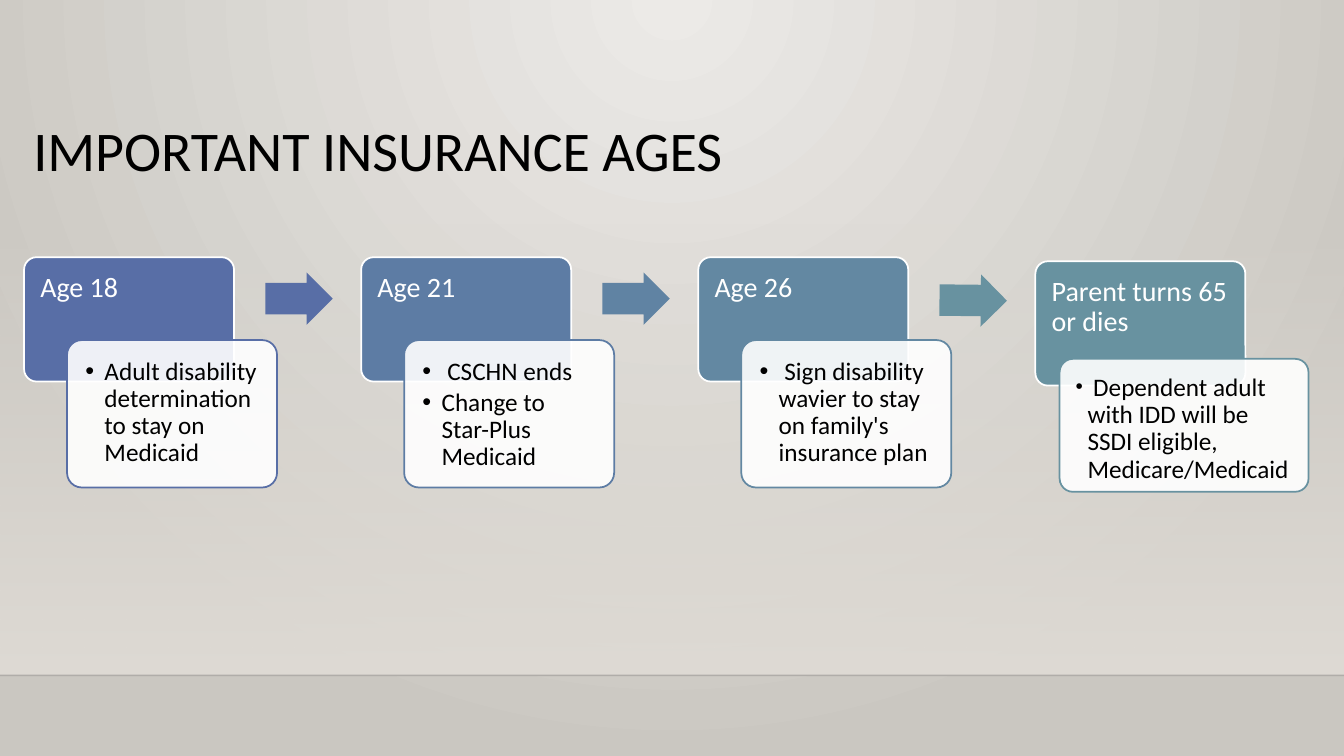
import lxml.etree
import pptx
import pptx.dml.color
import pptx.enum.shapes
import pptx.enum.text
import pptx.oxml
import pptx.oxml.ns
import pptx.util

Pt = pptx.util.Pt
SHAPE = pptx.enum.shapes.MSO_SHAPE
FONT = "Calibri"
COLORS = {
    "glow": "ECEAE7", "edge": "CAC7C1", "floor": "DFDBD5", "rule": "000001",
    "text": "000000", "white": "FFFFFF",
    "age18": "586EA6", "age21": "5D7CA4", "age26": "6388A2", "parent": "6892A0",
    "arrow21": "6083A3",
}
STAGES = [
    {"head": "Age 18", "color": "age18", "arrow": "age18",
     "items": ["Adult disability determination to stay on Medicaid"]},
    {"head": "Age 21", "color": "age21", "arrow": "arrow21",
     "items": [" CSCHN ends", "Change to Star-Plus Medicaid"]},
    {"head": "Age 26", "color": "age26", "arrow": "parent", "arrow_top": 12.2, "turn": 0.6,
     "items": [" Sign disability wavier to stay on family's insurance plan"]},
    {"head": "Parent turns 65 or dies", "color": "parent", "drop": 2.9,
     "card": (17.3, 69.7, 177.8, 95), "inset": 8.6, "indent": 8.6, "bullet": 83,
     "items": [" Dependent adult with IDD will be SSDI eligible, Medicare/Medicaid"]},
]


def rgb(name):
    """Return the named colour."""
    return pptx.dml.color.RGBColor.from_string(COLORS[name])


def add_sub(parent, tag, **attrs):
    """Append a DrawingML element to its parent."""
    return lxml.etree.SubElement(parent, pptx.oxml.ns.qn(tag), **attrs)


def set_alpha(fill, percent):
    """Set the opacity of a solid fill element holder."""
    color = next(fill.iter(pptx.oxml.ns.qn("a:srgbClr")))
    add_sub(color, "a:alpha", val=str(percent * 1000))


def set_gradient(fill, first, last):
    """Apply a two-stop gradient and return its XML element's stops."""
    fill.gradient()
    for stop, name, position in zip(fill.gradient_stops, (first, last), (0, 1)):
        stop.color.rgb = rgb(name)
        stop.position = position


def add_box(s, kind, box, adjustments=()):
    """Add a preset shape without shadow in the given box."""
    sp = s.shapes.add_shape(kind, *(Pt(v) for v in box))
    sp.shadow.inherit = False
    for i, value in enumerate(adjustments):
        sp.adjustments[i] = value
    return sp


def fill_box(sp, fill, line=None):
    """Give a shape a solid fill and an optional outline."""
    sp.fill.solid()
    sp.fill.fore_color.rgb = rgb(fill)
    if line:
        sp.line.color.rgb = rgb(line)
        sp.line.width = Pt(1.25)
    else:
        sp.line.fill.background()


def format_paragraph(p, size, color, after=0):
    """Format a paragraph and its runs."""
    p.alignment = pptx.enum.text.PP_ALIGN.LEFT
    p.line_spacing = 0.9
    p.space_after = Pt(after)
    for r in p.runs:
        r.font.name = FONT
        r.font.size = Pt(size)
        r.font.color.rgb = rgb(color)


def set_frame(tf, inset, anchor):
    """Set wrapping, equal margins and the anchor of a text frame."""
    tf.word_wrap = True
    tf.vertical_anchor = anchor
    tf.margin_left = tf.margin_right = tf.margin_top = tf.margin_bottom = Pt(inset)


def add_backdrop(s, width, floor_top, floor_bottom):
    """Draw the radial background, the fading wall and the floor line."""
    set_gradient(s.background.fill, "glow", "edge")
    grad = next(s.element.iter(pptx.oxml.ns.qn("a:gradFill")))
    grad.remove(grad.find(pptx.oxml.ns.qn("a:lin")))
    radial = add_sub(grad, "a:path", path="circle")
    add_sub(radial, "a:fillToRect", l="43000", t="0", r="43000", b="100000")

    wall = add_box(s, SHAPE.RECTANGLE, (0, floor_top, width, floor_bottom - floor_top))
    set_gradient(wall.fill, "floor", "floor")
    wall.fill.gradient_angle = 270
    set_alpha(wall.element.spPr, 0)
    wall.line.fill.background()

    rule = s.shapes.add_connector(pptx.enum.shapes.MSO_CONNECTOR.STRAIGHT,
                                  0, Pt(floor_bottom), Pt(width), Pt(floor_bottom))
    rule.line.color.rgb = rgb("rule")
    rule.line.width = Pt(1)
    set_alpha(rule.element.spPr, 20)
    add_sub(rule.element.spPr, "a:effectLst")


def add_title(s, text, box):
    """Place the slide title in its placeholder."""
    title = s.shapes.title
    title.left, title.top, title.width, title.height = (Pt(v) for v in box)
    tf = title.text_frame
    tf.text = text
    set_frame(tf, 7.2, pptx.enum.text.MSO_ANCHOR.BOTTOM)
    format_paragraph(tf.paragraphs[0], 40, "text")


def add_card(s, stage, box):
    """Draw the translucent card with its bulleted items."""
    card = add_box(s, SHAPE.ROUNDED_RECTANGLE, box, [0.1])
    fill_box(card, "white", stage["color"])
    set_alpha(card.element.spPr, 90)
    tf = card.text_frame
    set_frame(tf, stage.get("inset", 10), pptx.enum.text.MSO_ANCHOR.TOP)
    indent = Pt(stage.get("indent", 13.7))
    for i, item in enumerate(stage["items"]):
        p = tf.add_paragraph() if i else tf.paragraphs[0]
        p.text = item
        pPr = p._p.get_or_add_pPr()
        pPr.set("marL", str(indent))
        pPr.set("indent", str(-indent))
        add_sub(pPr, "a:buSzPct", val=str(stage.get("bullet", 100) * 1000))
        add_sub(pPr, "a:buFont", typeface="Arial")
        add_sub(pPr, "a:buChar", char="•")
        format_paragraph(p, 18, "text", 2.7)


def add_stage(s, stage, left, top):
    """Draw one stage: heading, card and the arrow to the next stage."""
    head_top = top + stage.get("drop", 0)
    head = add_box(s, SHAPE.ROUNDED_RECTANGLE, (left, head_top, 150, 88.8), [0.1])
    fill_box(head, stage["color"], "white")
    tf = head.text_frame
    tf.text = stage["head"]
    set_frame(tf, 9, pptx.enum.text.MSO_ANCHOR.TOP)
    format_paragraph(tf.paragraphs[0], 20, "white")

    dx, dy, width, height = stage.get("card", (30.7, 59.2, 150, 105.3))
    add_card(s, stage, (left + dx, head_top + dy, width, height))

    if "arrow" in stage:
        arrow_top = top + stage.get("arrow_top", 10.9)
        arrow = add_box(s, SHAPE.RIGHT_ARROW, (left + 172.3, arrow_top, 48.2, 37.4), [0.6, 0.5])
        fill_box(arrow, stage["arrow"])
        arrow.rotation = stage.get("turn", 0)


def add_timeline(s, left, top, pitch):
    """Lay out the stages at an equal pitch."""
    for i, stage in enumerate(STAGES):
        add_stage(s, stage, left + i * pitch, top)


def main():
    """Build the slide and save it."""
    prs = pptx.Presentation()
    prs.slide_width, prs.slide_height = Pt(960), Pt(540)
    s = prs.slides.add_slide(prs.slide_layouts[5])
    add_backdrop(s, 960, 159, 482.4)
    add_title(s, "IMPORTANT INSURANCE AGES", (16.6, 49.7, 888.5, 88.6))
    add_timeline(s, 17.2, 183.7, 240.8)
    prs.save("out.pptx")


if __name__ == "__main__":
    main()
